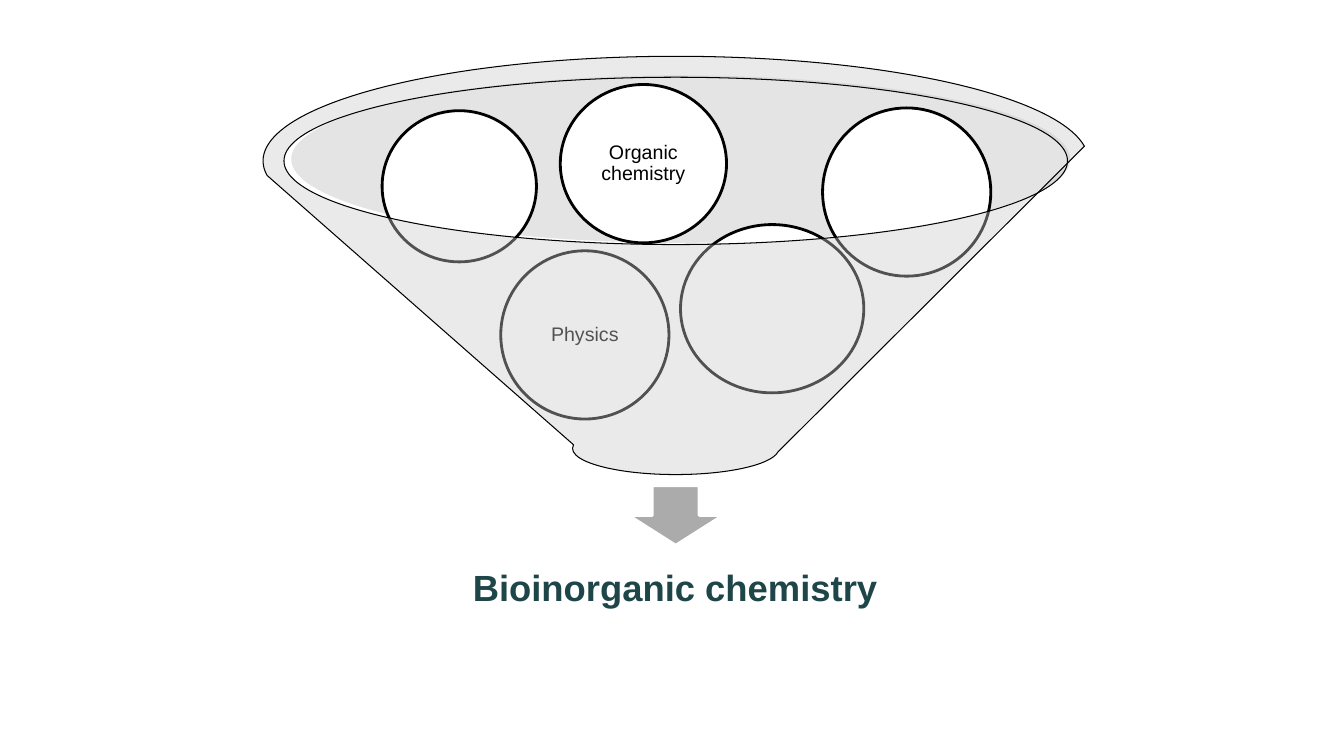
import pptx
import pptx.dml.color
import pptx.enum.shapes
import pptx.enum.text
import pptx.oxml
import pptx.oxml.ns
import pptx.util

Cm = pptx.util.Cm
Pt = pptx.util.Pt
SHAPE = pptx.enum.shapes.MSO_SHAPE


def color(value):
    return pptx.dml.color.RGBColor.from_string(value)


class Slide:
    """Draw styled elements on one slide."""

    font = "Arial"
    ink = "000000"
    paper = "FFFFFF"

    def __init__(self, prs):
        self.s = prs.slides.add_slide(prs.slide_layouts[6])

    def label(self, sp, text, size, ink, bold, inset):
        tf = sp.text_frame
        tf.word_wrap = True
        tf.vertical_anchor = pptx.enum.text.MSO_ANCHOR.MIDDLE
        tf.margin_left = tf.margin_right = Cm(inset)
        tf.margin_top = tf.margin_bottom = Cm(inset)
        tf.text = text
        p = tf.paragraphs[0]
        p.alignment = pptx.enum.text.PP_ALIGN.CENTER
        p.line_spacing = 0.9
        for r in p.runs:
            r.font.name = self.font
            r.font.size = Pt(size)
            r.font.bold = bold
            r.font.color.rgb = color(ink)

    def shape(self, kind, box, fill, line=None, width=2, opacity=None):
        sp = self.s.shapes.add_shape(kind, *map(Cm, box))
        sp.shadow.inherit = False
        sp.fill.solid()
        sp.fill.fore_color.rgb = color(fill)
        if opacity:
            clr = sp.element.spPr.find(".//" + pptx.oxml.ns.qn("a:srgbClr"))
            alpha = pptx.oxml.parse_xml(
                f'<a:alpha {pptx.oxml.ns.nsdecls("a")} val="{opacity * 1000}"/>')
            clr.append(alpha)
        if line:
            sp.line.color.rgb = color(line)
            sp.line.width = Pt(width)
        else:
            sp.line.fill.background()
        return sp

    def ball(self, box, text=None):
        sp = self.shape(SHAPE.OVAL, box, self.paper, self.ink)
        if text:
            self.label(sp, text, 14, self.ink, False, 0.05)

    def result(self, box, text):
        sp = self.s.shapes.add_textbox(*map(Cm, box))
        self.label(sp, text, 26, "1E4649", True, 0.51)


def main():
    prs = pptx.Presentation()
    prs.slide_width = Cm(33.87)
    prs.slide_height = Cm(19.05)
    slide = Slide(prs)
    slide.ball((12.62, 6.32, 4.24, 4.24), "Physics")
    slide.shape(SHAPE.OVAL, (7.34, 1.9, 19.63, 4.22), "BDBDBD", opacity=40)
    slide.shape(SHAPE.DOWN_ARROW, (15.85, 12.24, 2.36, 1.5), "ABABAB", slide.paper)
    slide.result((11.38, 13.46, 11.28, 2.82), "Bioinorganic chemistry")
    for box in ((17.15, 5.66, 4.62, 4.24),
                (9.63, 2.79, 3.89, 3.81),
                (20.73, 2.72, 4.24, 4.24)):
        slide.ball(box)
    slide.shape(SHAPE.FUNNEL, (6.63, 1.42, 20.8, 10.54), "CCCCCC", slide.ink, 0.75, 40)
    slide.ball((14.12, 2.13, 4.19, 3.99), "Organic chemistry")
    prs.save("out.pptx")


if __name__ == "__main__":
    main()
